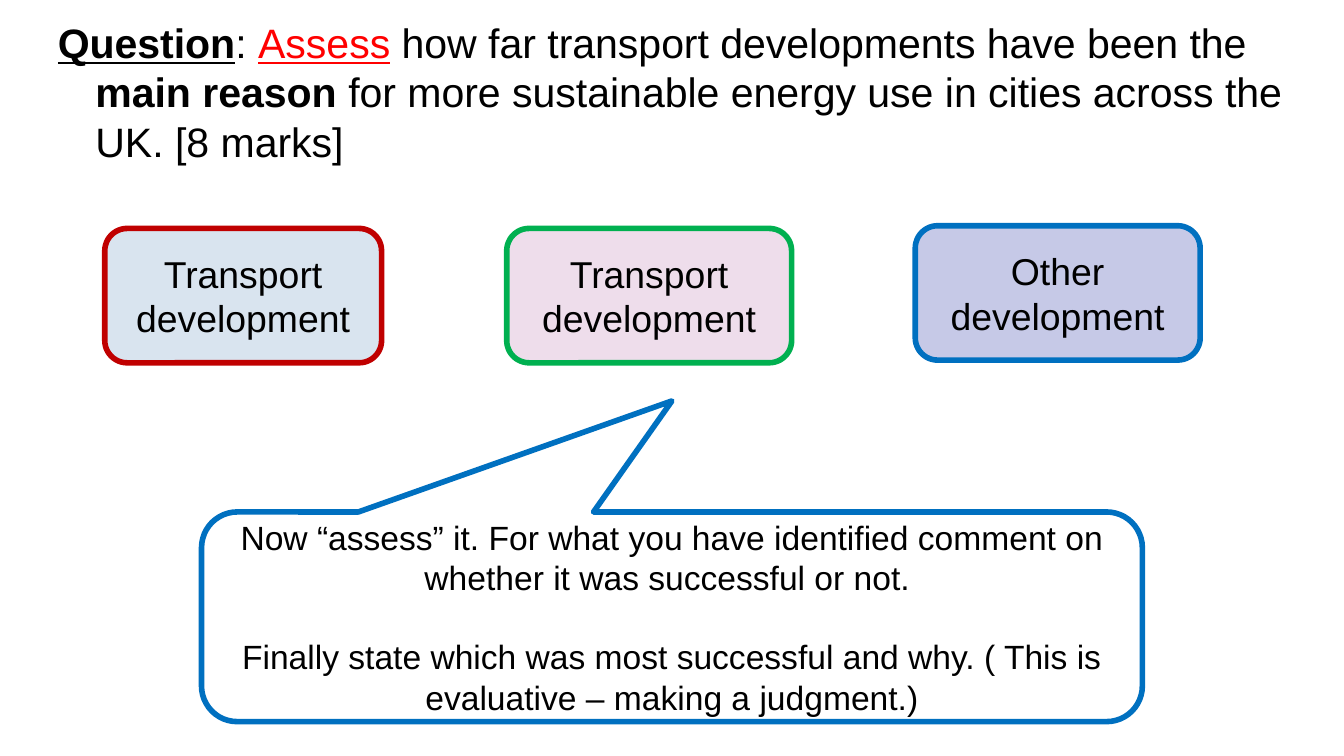
import pptx
import pptx.dml.color
import pptx.enum.shapes
import pptx.enum.text
import pptx.util
from pptx.util import Inches

FONT = "Arial"
BLACK = "000000"
RED = "FF0000"
BLUE = "0070C0"
SHAPES = pptx.enum.shapes.MSO_SHAPE
ANCHOR = pptx.enum.text.MSO_ANCHOR
ALIGN = pptx.enum.text.PP_ALIGN


def color(hex_string):
    return pptx.dml.color.RGBColor.from_string(hex_string)


def format_font(font, size, font_color=BLACK, bold=False, underline=False):
    font.name = FONT
    font.size = pptx.util.Pt(size)
    font.color.rgb = color(font_color)
    font.bold = bold
    font.underline = underline


def add_question(slide, parts):
    """Fill the title with (text, colour, bold, underline) parts and a hanging indent."""
    title = slide.shapes.title
    title.left, title.top = Inches(0.35), Inches(0.09)
    title.width, title.height = Inches(9.37), Inches(1.06)
    text_frame = title.text_frame
    text_frame.word_wrap = True
    text_frame.auto_size = pptx.enum.text.MSO_AUTO_SIZE.NONE
    text_frame.vertical_anchor = ANCHOR.TOP
    text_frame.margin_left = text_frame.margin_right = Inches(0.08)
    text_frame.margin_top = text_frame.margin_bottom = Inches(0.04)
    paragraph = text_frame.paragraphs[0]
    paragraph.alignment = ALIGN.LEFT
    properties = paragraph._p.get_or_add_pPr()
    properties.set("marL", str(Inches(0.28)))
    properties.set("indent", str(Inches(-0.28)))
    for text, font_color, bold, underline in parts:
        run = paragraph.add_run()
        run.text = text
        format_font(run.font, 22, font_color, bold, underline)


def add_box(slide, preset, position, fill, line, text, size):
    """Add an outlined shape with centred text, one paragraph per line of text."""
    shape = slide.shapes.add_shape(preset, *[Inches(length) for length in position])
    shape.shadow.inherit = False
    shape.fill.solid()
    shape.fill.fore_color.rgb = color(fill)
    shape.line.color.rgb = color(line)
    shape.line.width = pptx.util.Pt(3)
    text_frame = shape.text_frame
    text_frame.word_wrap = True
    text_frame.vertical_anchor = ANCHOR.MIDDLE
    text_frame.text = text
    for paragraph in text_frame.paragraphs:
        paragraph.alignment = ALIGN.CENTER
        for run in paragraph.runs:
            format_font(run.font, size)
    return shape


def add_callout(slide, text):
    callout = add_box(slide, SHAPES.ROUNDED_RECTANGULAR_CALLOUT, (1.5, 3.81, 7, 1.56),
                      "FFFFFF", BLUE, text, 18)
    callout.adjustments[0] = 0
    callout.adjustments[1] = -1.03
    callout.adjustments[2] = 0.17
    for paragraph in callout.text_frame.paragraphs[1:]:
        paragraph.space_before = pptx.util.Pt(21)


def main():
    presentation = pptx.Presentation()
    presentation.slide_width = Inches(10)
    presentation.slide_height = presentation.slide_width * 9 // 16
    slide = presentation.slides.add_slide(presentation.slide_layouts.get_by_name("Title Only"))

    add_question(slide, [
        ("Question", BLACK, True, True),
        (": ", BLACK, False, False),
        ("Assess", RED, False, True),
        (" how far transport developments have been the ", BLACK, False, False),
        ("main reason ", BLACK, True, False),
        ("for more sustainable energy use in cities across the UK. [8 marks]",
         BLACK, False, False),
    ])

    developments = [
        ("Transport development", 0.78, 1.7, 2.06, "D9E4EF", "C00000"),
        ("Transport development", 3.77, 1.7, 2.12, "EEDDEB", "00B050"),
        ("Other development", 6.81, 1.68, 2.12, "C6C9E7", BLUE),
    ]
    for text, left, top, width, fill, line in developments:
        add_box(slide, SHAPES.ROUNDED_RECTANGLE, (left, top, width, 1), fill, line, text, 20)

    add_callout(slide, "Now “assess” it. For what you have identified comment on "
                       "whether it was successful or not. \n"
                       "Finally state which was most successful and why. "
                       "( This is evaluative – making a judgment.)")

    presentation.save("out.pptx")


if __name__ == "__main__":
    main()
